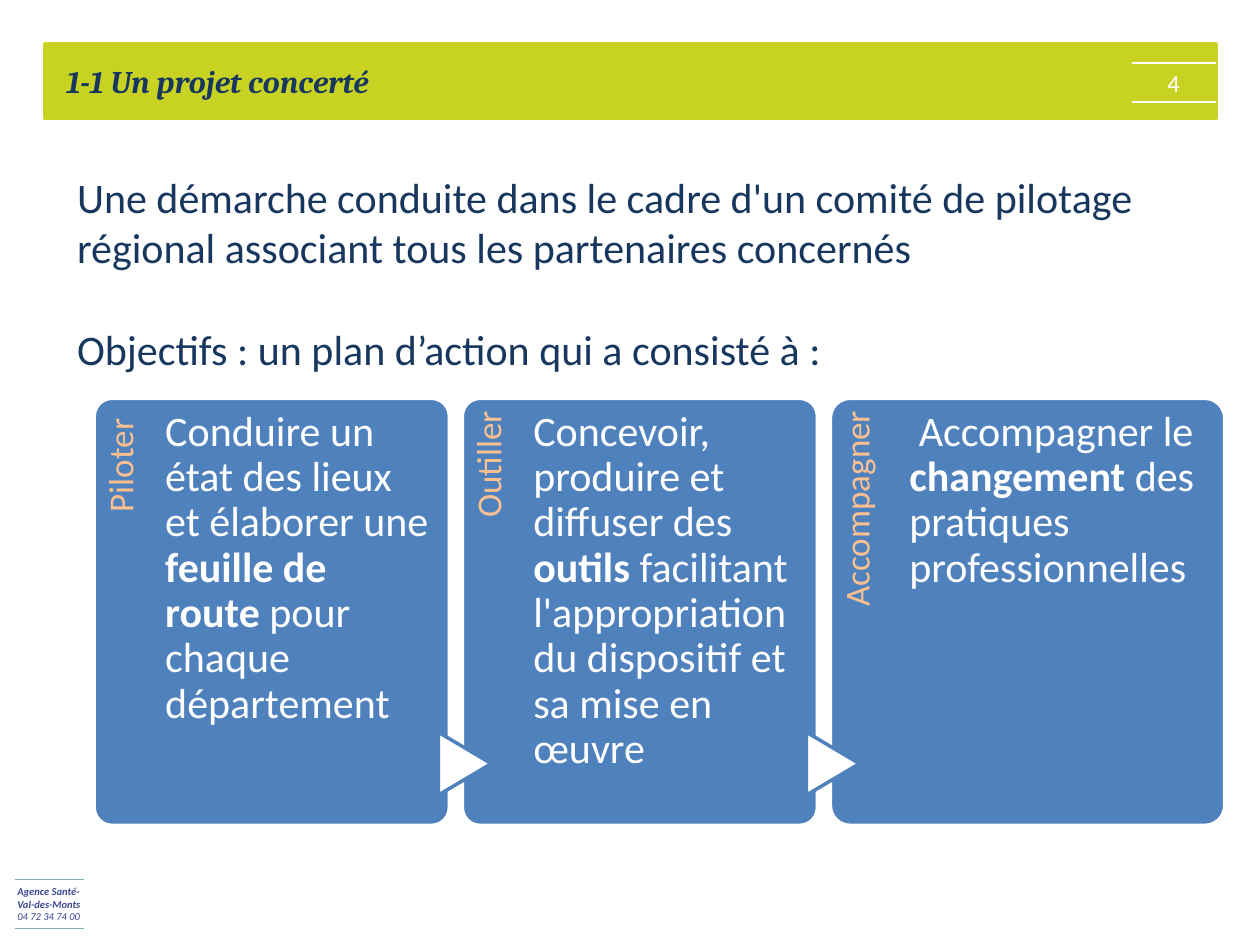
from lxml.etree import SubElement
from pptx import Presentation
from pptx.dml.color import RGBColor
from pptx.enum.shapes import MSO_CONNECTOR, MSO_SHAPE as SHAPE
from pptx.enum.text import MSO_ANCHOR, MSO_AUTO_SIZE, PP_ALIGN as ALIGN
from pptx.oxml.ns import qn
from pptx.util import Cm, Pt

# Colours
LIME = RGBColor(0xC8, 0xD2, 0x23)
NAVY = RGBColor(0x17, 0x37, 0x5E)
BLUE = RGBColor(0x4F, 0x81, 0xBD)
PEACH = RGBColor(0xFA, 0xC0, 0x90)
INDIGO = RGBColor(0x3C, 0x46, 0x93)
TEAL = RGBColor(0x7F, 0xAD, 0xB3)
WHITE = RGBColor(0xFF, 0xFF, 0xFF)

# Content: a paragraph is a list of (text, bold) runs
TITLE = "1-1 Un projet concerté"
NUMBER = "4"
BODY = [
    "Une démarche conduite dans le cadre d'un comité de pilotage régional "
    "associant tous les partenaires concernés",
    "Objectifs : un plan d’action qui a consisté à :",
]
CONTACT = [("Agence Santé-", True), ("Val-des-Monts", True), ("04 72 34 74 00", False)]
CARDS = [  # label, width in cm, runs
    ("Piloter ", 7.16, [("Conduire un état des lieux et élaborer une ", False),
                        ("feuille de route ", True),
                        ("pour chaque département", False)]),
    ("Outiller", 7.16, [("Concevoir, produire et diffuser des ", False),
                        ("outils", True),
                        (" facilitant l'appropriation du dispositif et "
                         "sa mise en œuvre", False)]),
    ("Accompagner", 7.95, [(" Accompagner le ", False),
                           ("changement", True),
                           (" des pratiques professionnelles", False)]),
]

# Text formats
TITLE_FONT = dict(name="Cambria", size=Pt(18), bold=True, italic=True)
BODY_FONT = dict(name="Calibri", size=Pt(24))
NUMBER_FONT = dict(name="Calibri", size=Pt(14))
LABEL_FONT = dict(name="Calibri", size=Pt(20))
CONTACT_FONT = dict(name="Calibri", size=Pt(6), italic=True)

# Card row, in cm
LEFT, TOP, HEIGHT, GAP = 1.9, 8.03, 8.61, 0.26
LABEL_LENGTH, LABEL_SHARE, TEXT_SHARE = 7.06, 0.2, 0.745
ARROW_W, ARROW_H, ARROW_TOP = 1.27, 1.07, 14.86


def set_all(obj, values):
    for key, value in values.items():
        setattr(obj, key, value)


def place(sp, x, y, w, h):
    set_all(sp, dict(left=Cm(x), top=Cm(y), width=Cm(w), height=Cm(h)))


def write(sp, paragraphs, font, color, para=None, frame=None):
    tf = sp.text_frame
    set_all(tf, dict(word_wrap=True, auto_size=MSO_AUTO_SIZE.NONE,
                     vertical_anchor=MSO_ANCHOR.TOP, **(frame or {})))
    for i, runs in enumerate(paragraphs):
        p = tf.add_paragraph() if i else tf.paragraphs[0]
        set_all(p, para or {})
        for text, bold in runs:
            r = p.add_run()
            r.text = text
            set_all(r.font, {"bold": bold, **font})
            r.font.color.rgb = color


def add_text(s, box, *args, **kwargs):
    sp = s.shapes.add_textbox(*map(Cm, box))
    write(sp, *args, **kwargs)
    return sp


def add_box(s, kind, box, fill, line):
    sp = s.shapes.add_shape(kind, *map(Cm, box))
    sp.shadow.inherit = False
    sp.fill.solid()
    sp.fill.fore_color.rgb = fill
    sp.line.color.rgb = line
    sp.line.width = Pt(2)
    return sp


def add_rule(s, x1, x2, y, color, width):
    line = s.shapes.add_connector(MSO_CONNECTOR.STRAIGHT, Cm(x1), Cm(y), Cm(x2), Cm(y))
    line.line.color.rgb = color
    line.line.width = Pt(width)
    SubElement(line._element.spPr, qn("a:effectLst"))


def add_card(s, x, width, label, runs, arrow):
    card = add_box(s, SHAPE.ROUNDED_RECTANGLE, (x, TOP, width, HEIGHT), BLUE, WHITE)
    card.adjustments[0] = 0.05

    # Vertical label: laid out flat, then turned around its centre
    strip = LABEL_SHARE * width
    box = (x + (strip - LABEL_LENGTH) / 2, TOP + (LABEL_LENGTH - strip) / 2,
           LABEL_LENGTH, strip)
    sp = add_text(s, box, [[(label, False)]], LABEL_FONT, PEACH,
                  para=dict(alignment=ALIGN.RIGHT, line_spacing=0.9),
                  frame=dict(margin_left=0, margin_top=Cm(0.18),
                             margin_right=Cm(0.25), margin_bottom=0))
    sp.rotation = 270

    # Arrow coming from the previous card
    if arrow:
        box = (x + 0.05 - ARROW_W / 2, ARROW_TOP, ARROW_W, ARROW_H)
        add_box(s, SHAPE.FLOWCHART_EXTRACT, box, WHITE, BLUE).rotation = 90

    add_text(s, (x + strip, TOP, TEXT_SHARE * width, HEIGHT), [runs], BODY_FONT, WHITE,
             para=dict(line_spacing=0.9),
             frame=dict(margin_left=0, margin_top=Cm(0.23),
                        margin_right=0, margin_bottom=0))


def main():
    prs = Presentation()
    prs.slide_width, prs.slide_height = Cm(25.4), Cm(19.05)
    s = prs.slides.add_slide(prs.slide_layouts[1])
    title, body = s.placeholders

    # Header band and contact block
    add_box(s, SHAPE.RECTANGLE, (0.91, 0.89, 23.6, 1.5), LIME, LIME)
    for y in (1.27, 2.06):
        add_rule(s, 22.81, 24.51, y, WHITE, 1)
    add_text(s, (0.1, 17.73, 2.01, 1.02), [[run] for run in CONTACT], CONTACT_FONT,
             INDIGO, para=dict(line_spacing=Pt(7)))
    for y in (17.73, 18.72):
        add_rule(s, 0.3, 1.7, y, TEAL, 0.75)
    add_text(s, (22.81, 1.24, 1.7, 0.86), [[(NUMBER, False)]], NUMBER_FONT, WHITE,
             para=dict(alignment=ALIGN.CENTER))

    # Title and body, brought in front of the band
    for sp in (title, body):
        s.shapes._spTree.append(sp._element)
    place(title, 1.09, 1.12, 19.46, 1.02)
    write(title, [[(TITLE, True)]], TITLE_FONT, NAVY, para=dict(alignment=ALIGN.LEFT))
    place(body, 1.3, 3.33, 23.6, 4.37)
    write(body, [[(text, False)] for text in BODY], BODY_FONT, NAVY,
          para=dict(space_before=Pt(0)))
    for p in body.text_frame.paragraphs:
        pPr = p._p.get_or_add_pPr()
        pPr.set("marL", "0")
        pPr.set("indent", "0")
        SubElement(pPr, qn("a:buNone"))
    body.text_frame.paragraphs[1].space_before = Pt(29)

    # Cards
    x = LEFT
    for i, (label, width, runs) in enumerate(CARDS):
        add_card(s, x, width, label, runs, arrow=i > 0)
        x += width + GAP

    prs.save("out.pptx")


if __name__ == "__main__":
    main()
